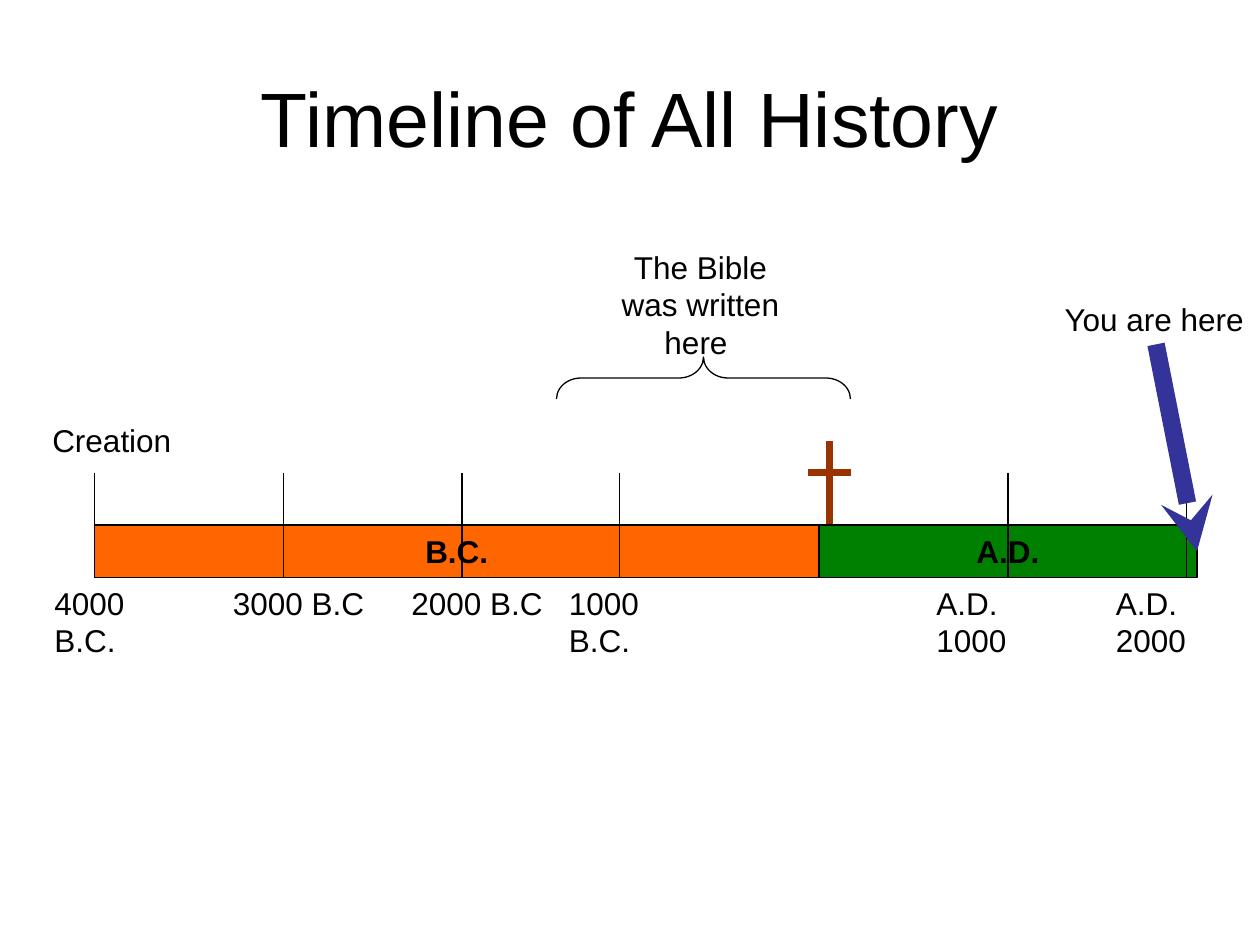
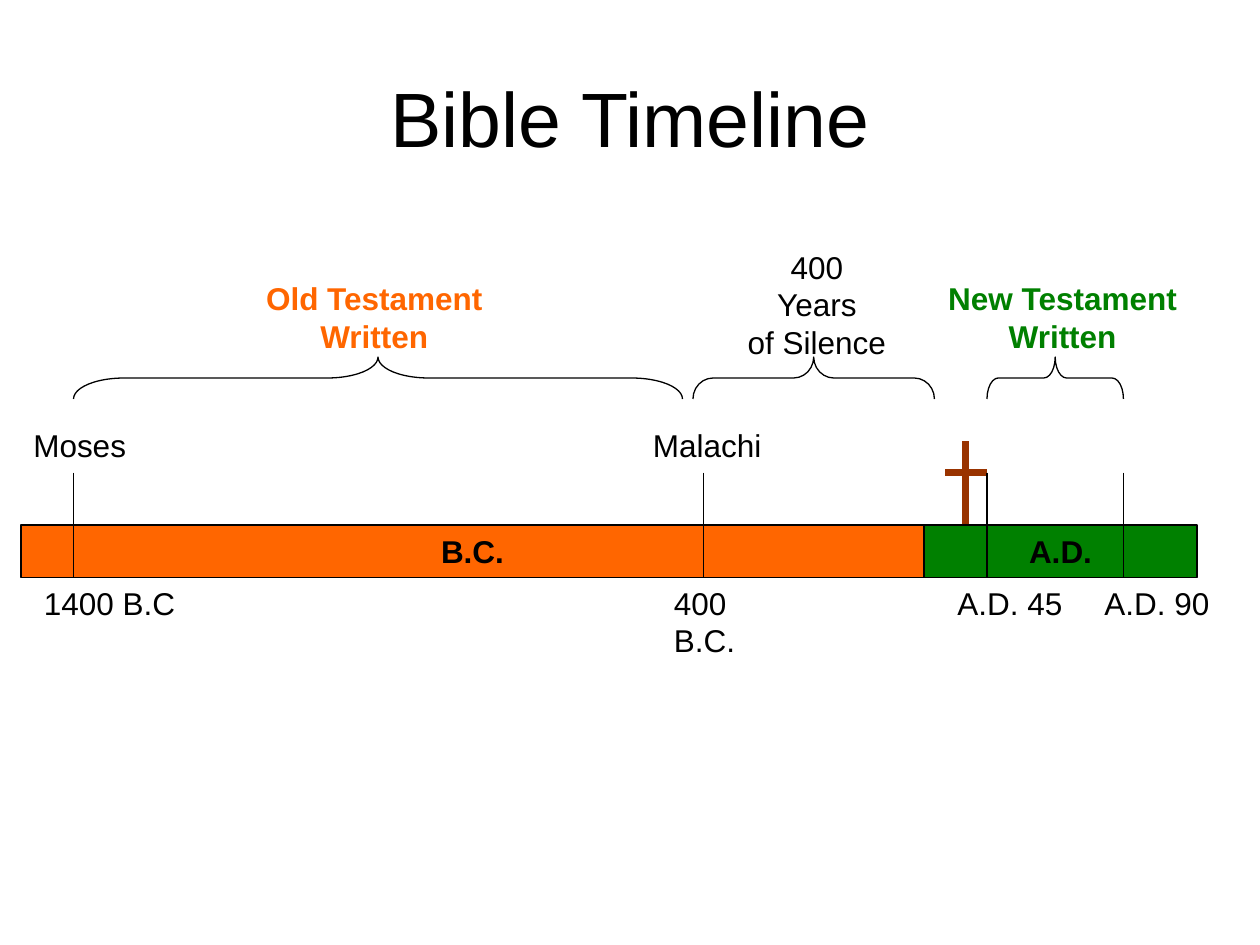
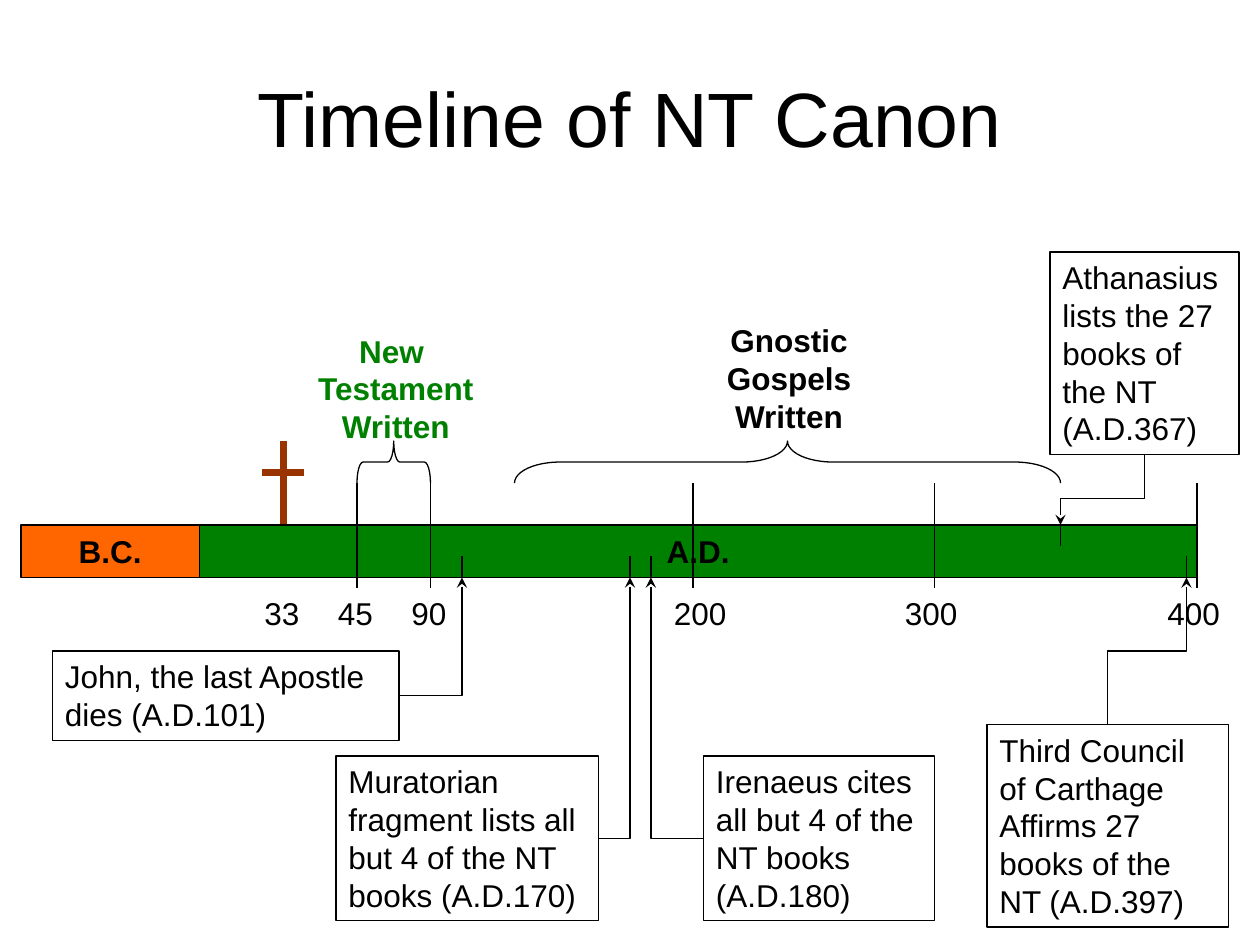
from lxml import etree
from pptx import Presentation
from pptx.dml.color import RGBColor
from pptx.enum.shapes import MSO_CONNECTOR as LINK, MSO_SHAPE as SHAPE
from pptx.enum.text import MSO_ANCHOR as ANCHOR, MSO_AUTO_SIZE as AUTO, PP_ALIGN as ALIGN
from pptx.oxml.ns import qn
from pptx.util import Cm, Pt

COLORS = {
    "ink": "000000",
    "bc": "FF6600",
    "ad": "008000",
    "cross": "993300",
    "pointer": "333399",
}
FONT = "Arial"
BAR_TOP, BAR_HEIGHT = 50, 5
BAR_BOTTOM = BAR_TOP + BAR_HEIGHT
LABEL_HEIGHT = 4.8


def grid(steps):
    """All places are counted in steps of a twelfth of an inch."""
    return Cm(steps * 2.54 / 12)


def color(name):
    return RGBColor.from_string(COLORS[name])


# Text
def write(frame, lines, ink="ink", size=18, bold=False, align=ALIGN.LEFT):
    for number, line in enumerate(lines):
        paragraph = frame.paragraphs[0] if number == 0 else frame.add_paragraph()
        paragraph.text = line
        paragraph.alignment = align
        font = paragraph.font
        font.name, font.size, font.bold = FONT, Pt(size), bold
        font.color.rgb = color(ink)


def add_titled_slide(deck, title):
    slide = deck.slides.add_slide(deck.slide_layouts[5])
    heading = slide.shapes.title
    heading.left, heading.top = grid(6), grid(3.6)
    heading.width, heading.height = grid(108), grid(15)
    heading.text_frame.vertical_anchor = ANCHOR.MIDDLE
    write(heading.text_frame, [title], size=44, align=ALIGN.CENTER)
    return slide


def add_label(slide, lines, left, top, width, height=LABEL_HEIGHT, **style):
    label = slide.shapes.add_textbox(grid(left), grid(top), grid(width), grid(height))
    label.text_frame.word_wrap = False
    label.text_frame.auto_size = AUTO.SHAPE_TO_FIT_TEXT
    write(label.text_frame, lines, **style)
    return label


def add_caption(slide, lines, left, top, width, ink="ink", bold=True):
    add_label(slide, lines, left, top, width, 1.2 + 3.6 * len(lines),
              ink=ink, bold=bold, align=ALIGN.CENTER)


def add_dates(slide, top, dates):
    for text, left, width in dates:
        add_label(slide, [text], left, top, width)


# Lines
def style_line(connector, ink="ink", width=0.75, arrow=False):
    connector.line.color.rgb = color(ink)
    connector.line.width = Pt(width)
    properties = connector._element.spPr
    if arrow:
        etree.SubElement(properties.find(qn("a:ln")), qn("a:tailEnd"), type="stealth")
    etree.SubElement(properties, qn("a:effectLst"))


def add_line(slide, x1, y1, x2, y2, **style):
    line = slide.shapes.add_connector(LINK.STRAIGHT, grid(x1), grid(y1), grid(x2), grid(y2))
    style_line(line, **style)
    return line


def add_ticks(slide, places, top, bottom):
    for x in places:
        add_line(slide, x, top, x, bottom)


def add_cross(slide, x):
    add_line(slide, x, 42, x, BAR_TOP, ink="cross", width=4)
    add_line(slide, x - 2, 45, x + 2, 45, ink="cross", width=4)


def turn_upright(connector, bend):
    """Make an elbow leave its box vertically, bending at the given share."""
    x1, y1 = connector.begin_x, connector.begin_y
    x2, y2 = connector.end_x, connector.end_y
    width, height = abs(y2 - y1), abs(x2 - x1)
    connector.left, connector.top = (x1 + x2 - width) // 2, (y1 + y2 - height) // 2
    connector.width, connector.height = width, height
    frame = connector._element.spPr.find(qn("a:xfrm"))
    for flip in ("flipH", "flipV"):
        frame.attrib.pop(flip, None)
    frame.set("rot", str((90 if y2 > y1 else 270) * 60000))
    guides = connector._element.spPr.find(qn("a:prstGeom")).find(qn("a:avLst"))
    etree.SubElement(guides, qn("a:gd"), name="adj1", fmla=f"val {round(bend * 100000)}")


# Shapes
def add_rectangle(slide, left, top, width, height, fill=None):
    box = slide.shapes.add_shape(SHAPE.RECTANGLE, grid(left), grid(top), grid(width), grid(height))
    box.shadow.inherit = False
    if fill:
        box.fill.solid()
        box.fill.fore_color.rgb = color(fill)
    else:
        box.fill.background()
    box.line.color.rgb = color("ink")
    box.line.width = Pt(0.75)
    return box


def add_era(slide, text, start, end, fill):
    era = add_rectangle(slide, start, BAR_TOP, end - start, BAR_HEIGHT, fill)
    era.text_frame.word_wrap = False
    era.text_frame.vertical_anchor = ANCHOR.MIDDLE
    write(era.text_frame, [text], bold=True, align=ALIGN.CENTER)


def add_brace(slide, start, end, top=34):
    span, depth = end - start, 4
    brace = slide.shapes.add_shape(
        SHAPE.RIGHT_BRACE, grid((start + end - depth) / 2), grid(top + (depth - span) / 2),
        grid(depth), grid(span))
    brace.rotation = 270
    brace.adjustments[0] = span / 48
    brace.shadow.inherit = False
    brace.fill.background()
    brace.line.color.rgb = color("ink")
    brace.line.width = Pt(0.75)


def add_event(slide, text, place, side, target, bend=None):
    """A boxed note with an elbow arrow from one of its sides to the bar."""
    note = add_rectangle(slide, *place)
    frame = note.text_frame
    frame.word_wrap = True
    frame.auto_size = AUTO.SHAPE_TO_FIT_TEXT
    frame.vertical_anchor = ANCHOR.TOP
    write(frame, [text])
    x, y = (grid(step) for step in target)
    arrow = slide.shapes.add_connector(LINK.ELBOW, note.left, note.top, x, y)
    arrow.begin_connect(note, side)
    if bend:
        turn_upright(arrow, bend)
    else:
        arrow._element.spPr.find(qn("a:prstGeom")).set("prst", "bentConnector2")
    style_line(arrow, arrow=True)


# Slides
def build_all_history(deck):
    slide = add_titled_slide(deck, "Timeline of All History")
    add_era(slide, "B.C.", 9, 78, "bc")
    add_cross(slide, 79)
    add_era(slide, "A.D.", 78, 114, "ad")
    add_ticks(slide, (9, 27, 44, 59, 96, 113), 45, BAR_BOTTOM)
    add_label(slide, ["Creation"], 3.8, 39.5, 13.8)
    add_dates(slide, BAR_BOTTOM, [
        ("4000 B.C.", 4, 15.7), ("3000 B.C", 21, 14.9), ("2000 B.C", 38, 14.9),
        ("1000 B.C.", 53, 15.7), ("A.D. 1000", 88, 15.7), ("A.D. 2000", 105.1, 15.7)])
    add_brace(slide, 53, 81)
    add_caption(slide, ["The Bible", "was written", "here "], 58, 23, 17.4, bold=False)
    here = add_label(slide, ["You are here"], 100.2, 28, 19.8)
    pointer = add_line(slide, 110.1, 32.8, 114, 52.5, ink="pointer", width=10, arrow=True)
    pointer.begin_connect(here, 2)


def build_bible(deck):
    slide = add_titled_slide(deck, "Bible Timeline")
    add_era(slide, "B.C.", 2, 88, "bc")
    add_cross(slide, 92)
    add_era(slide, "A.D.", 88, 114, "ad")
    add_ticks(slide, (7, 67, 94, 107), 45, BAR_BOTTOM)
    add_dates(slide, 40, [("Moses", 2, 11.3), ("Malachi", 61, 12.7)])
    add_dates(slide, BAR_BOTTOM, [
        ("1400 B.C", 3, 14.9), ("400 B.C.", 63, 14), ("A.D. 45", 90, 12.4),
        ("A.D. 90", 104, 12.4)])
    for start, end in ((7, 65), (66, 89), (94, 107)):
        add_brace(slide, start, end)
    add_caption(slide, ["Old Testament", "Written"], 24, 26, 23.3, "bc")
    add_caption(slide, ["400", "Years", "of Silence"], 70, 23, 15.6, bold=False)
    add_caption(slide, ["New Testament", "Written"], 89, 26, 24.4, "ad")


def build_canon(deck):
    slide = add_titled_slide(deck, "Timeline of NT Canon")
    add_cross(slide, 27)
    add_era(slide, "A.D.", 19, 114, "ad")
    add_era(slide, "B.C.", 2, 19, "bc")
    add_ticks(slide, (34, 41, 66, 89, 114), 46, 56)
    add_ticks(slide, (44, 60, 62, 113), 53, BAR_BOTTOM)
    add_ticks(slide, (101,), BAR_TOP, 52)
    add_dates(slide, 56, [
        ("33", 24, 5.8), ("45", 31, 5.8), ("90", 38, 5.8),
        ("200", 63, 7.4), ("300", 85, 7.4), ("400", 110, 7.4)])
    add_brace(slide, 34, 41, 42)
    add_caption(slide, ["New ", "Testament", "Written"], 29, 31, 17.4, "ad")
    add_brace(slide, 49, 101, 42)
    add_caption(slide, ["Gnostic", "Gospels", "Written"], 68, 30, 14.3)
    add_event(slide, "John, the last Apostle dies (A.D.101)",
              (5, 62, 33, 8.5), 3, (44, BAR_BOTTOM))
    add_event(slide, "Muratorian fragment lists all but 4 of the NT books (A.D.170)",
              (32, 72, 25, 15.7), 3, (60, BAR_BOTTOM))
    add_event(slide, "Irenaeus cites all but 4 of the NT books (A.D.180)",
              (67, 72, 22, 15.7), 1, (62, BAR_BOTTOM))
    add_event(slide, "Third Council of Carthage Affirms 27 books of the NT (A.D.397)",
              (94, 69, 23, 19.3), 0, (113, BAR_BOTTOM), bend=0.5)
    add_event(slide, "Athanasius lists the 27 books of the NT (A.D.367)",
              (100, 24, 18, 19.3), 2, (101, BAR_TOP), bend=0.62)


def main():
    deck = Presentation()
    deck.slide_width, deck.slide_height = Cm(25.4), Cm(19.05)
    build_all_history(deck)
    build_bible(deck)
    build_canon(deck)
    deck.save("out.pptx")


if __name__ == "__main__":
    main()
